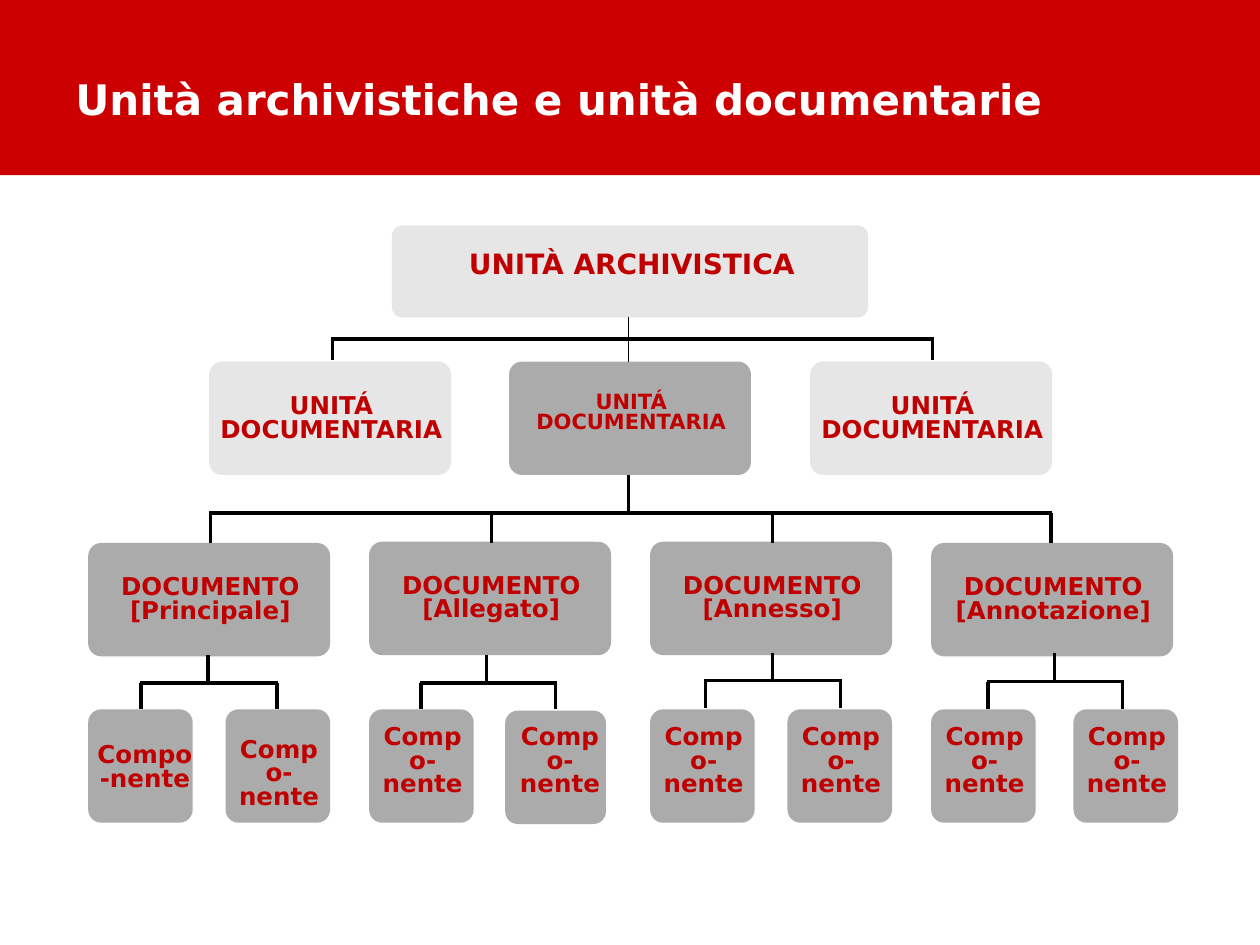
from dataclasses import dataclass

from lxml.etree import SubElement
from pptx import Presentation
from pptx.dml.color import RGBColor
from pptx.enum.shapes import MSO_CONNECTOR as Connector, MSO_SHAPE as Shape
from pptx.enum.text import MSO_ANCHOR as Anchor, PP_ALIGN as Align
from pptx.oxml.ns import qn
from pptx.util import Inches, Pt


@dataclass(frozen=True)
class Theme:
    font: str = "DejaVu Sans"
    banner: str = "CC0000"
    title_text: str = "FFFFFF"
    node_text: str = "C00000"
    light: str = "D9D9D9"
    dark: str = "7F7F7F"
    line: str = "000000"
    opacity: int = 65
    title_size: int = 24
    root_size: int = 16
    node_size: int = 14
    small_size: int = 12
    line_width: float = 2
    thin_width: float = 0.75


THEME = Theme()


@dataclass(frozen=True)
class Node:
    """A rounded box and the label laid over it; lengths in inches."""
    text: str
    left: float
    top: float
    width: float
    height: float
    label_height: float
    label_width: float
    label_drop: float = 0.04
    size: int = THEME.node_size
    fill: str = THEME.dark
    corner: float = 0.115


@dataclass(frozen=True)
class Fork:
    """A stem down to a bar, with drops from the bar to the children."""
    stem_x: float
    stem_top: float
    bar_y: float
    drops: tuple[float, ...]
    bottom: float


def color(value: str) -> RGBColor:
    return RGBColor.from_string(value)


def add_box(slide, kind, left: float, top: float, width: float, height: float,
            fill: str):
    shape = slide.shapes.add_shape(
        kind, Inches(left), Inches(top), Inches(width), Inches(height))
    shape.shadow.inherit = False
    shape.fill.solid()
    shape.fill.fore_color.rgb = color(fill)
    shape.line.fill.background()
    return shape


def add_label(slide, text: str, left: float, top: float, width: float,
              height: float, size: int, text_color: str):
    box = slide.shapes.add_textbox(
        Inches(left), Inches(top), Inches(width), Inches(height))
    frame = box.text_frame
    frame.word_wrap = True
    frame.vertical_anchor = Anchor.MIDDLE
    frame.text = text
    font = frame.paragraphs[0].font
    font.name = THEME.font
    font.size = Pt(size)
    font.bold = True
    font.color.rgb = color(text_color)
    return frame


def add_node(slide, node: Node) -> None:
    shape = add_box(slide, Shape.ROUNDED_RECTANGLE, node.left, node.top,
                    node.width, node.height, node.fill)
    shape.adjustments[0] = node.corner
    fill_color = shape._element.spPr.find(qn("a:solidFill"))[0]
    SubElement(fill_color, qn("a:alpha"), val=str(THEME.opacity * 1000))

    frame = add_label(slide, node.text, node.left + 0.04,
                      node.top + node.label_drop, node.label_width,
                      node.label_height, node.size, THEME.node_text)
    frame.margin_left = frame.margin_right = Inches(0)
    frame.margin_top = frame.margin_bottom = Inches(0)
    paragraph = frame.paragraphs[0]
    paragraph.alignment = Align.CENTER
    paragraph.line_spacing = 0.8
    paragraph._p.get_or_add_pPr().set("marL", str(Inches(0.03)))


def add_line(slide, x1: float, y1: float, x2: float, y2: float,
             width: float = THEME.line_width) -> None:
    line = slide.shapes.add_connector(
        Connector.STRAIGHT, Inches(x1), Inches(y1), Inches(x2), Inches(y2))
    line.line.color.rgb = color(THEME.line)
    line.line.width = Pt(width)
    SubElement(line._element.spPr, qn("a:effectLst"))


def add_fork(slide, fork: Fork, stem_width: float = THEME.line_width) -> None:
    overlap = 0.01
    add_line(slide, fork.stem_x, fork.stem_top,
             fork.stem_x, fork.bar_y + overlap, stem_width)
    add_line(slide, fork.drops[0] - overlap, fork.bar_y,
             fork.drops[-1] + overlap, fork.bar_y)
    for x in fork.drops:
        add_line(slide, x, fork.bar_y, x, fork.bottom)


def unit(left: float, **style) -> Node:
    values = dict(label_height=0.86, label_drop=0.03) | style
    return Node("UNITÁ DOCUMENTARIA", left, 2.87, 1.92, 0.9,
                label_width=1.83, **values)


def component(left: float, top: float = 5.63, width: float = 0.83,
              label_width: float = 0.74, label_height: float = 0.76,
              label_drop: float = 0.04) -> Node:
    return Node("Compo-nente", left, top, width, 0.9, label_height,
                label_width, label_drop, corner=0.125)


ROOT = Node("UNITÀ ARCHIVISTICA", 3.11, 1.79, 3.78, 0.73, 0.59, 3.7, 0.03,
            THEME.root_size, THEME.light)
UNITS = [
    unit(1.66, fill=THEME.light),
    unit(4.04, label_height=0.77, size=THEME.small_size),
    unit(6.43, fill=THEME.light),
]
DOCUMENTS = [
    Node(f"DOCUMENTO\v[{name}]", 0.7 + 2.23 * column, top, 1.92, 0.9, 0.83, 1.83)
    for column, (name, top) in enumerate([
        ("Principale", 4.31), ("Allegato", 4.3),
        ("Annesso", 4.3), ("Annotazione", 4.31)])
]
COMPONENTS = [
    component(0.7, label_width=0.79, label_height=0.86),
    component(1.79, label_drop=0.14),
    component(2.93),
    component(4.01, top=5.64, width=0.8, label_drop=0.03, label_width=0.76),
    component(5.16),
    component(6.25),
    component(7.39),
    component(8.52),
]
UNIT_FORK = Fork(4.99, 2.52, 2.69, (2.64, 7.4), 2.86)
FORKS = [
    Fork(4.99, 3.77, 4.07, (1.67, 3.9, 6.13, 8.34), 4.31),
    Fork(1.65, 5.2, 5.42, (1.12, 2.2), 5.63),
    Fork(3.86, 5.2, 5.42, (3.34, 4.41), 5.63),
    Fork(6.13, 5.18, 5.4, (5.6, 6.67), 5.62),
    Fork(8.37, 5.18, 5.41, (7.84, 8.91), 5.63),
]


def main() -> None:
    presentation = Presentation()
    presentation.slide_width = Inches(10)
    presentation.slide_height = Inches(7.5)
    slide = presentation.slides.add_slide(presentation.slide_layouts[6])

    # Banner and title
    add_box(slide, Shape.RECTANGLE, 0, 0, 10, 1.39, THEME.banner)
    add_label(slide, "Unità archivistiche e unità documentarie",
              0.5, 0.07, 9, 1.43, THEME.title_size, THEME.title_text)

    # Tree boxes
    for node in [ROOT, *UNITS, *DOCUMENTS, *COMPONENTS]:
        add_node(slide, node)

    # Branches; the thin stem runs on to the middle unit
    add_fork(slide, UNIT_FORK, THEME.thin_width)
    add_line(slide, UNIT_FORK.stem_x, UNIT_FORK.bar_y,
             UNIT_FORK.stem_x, UNITS[1].top, THEME.thin_width)
    for fork in FORKS:
        add_fork(slide, fork)

    presentation.save("out.pptx")


if __name__ == "__main__":
    main()
